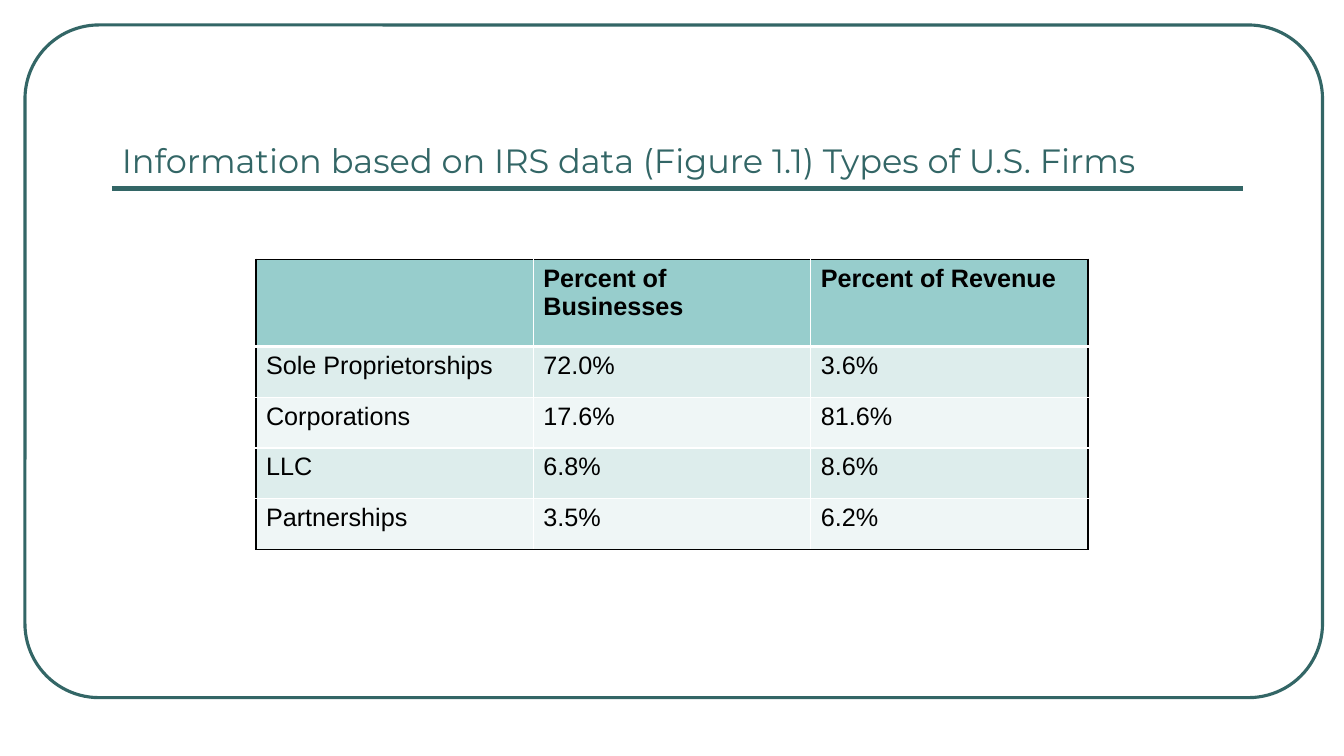
from lxml import etree
from pptx import Presentation
from pptx.dml.color import RGBColor
from pptx.enum.shapes import MSO_CONNECTOR, MSO_SHAPE
from pptx.enum.text import MSO_ANCHOR
from pptx.oxml.ns import qn
from pptx.util import Cm, Pt

ROUNDED = MSO_SHAPE.ROUNDED_RECTANGLE
STRAIGHT = MSO_CONNECTOR.STRAIGHT
BOTTOM = MSO_ANCHOR.BOTTOM
TEAL = RGBColor(0x33, 0x66, 0x66)
BLACK = RGBColor(0, 0, 0)
WHITE = RGBColor(0xFF, 0xFF, 0xFF)
HEADER_FILL = RGBColor(0x97, 0xCD, 0xCC)
BAND_FILLS = [RGBColor(0xEF, 0xF6, 0xF6), RGBColor(0xDD, 0xED, 0xEC)]

FIRMS = [
    ["", "Percent of Businesses", "Percent of Revenue"],
    ["Sole Proprietorships", "72.0%", "3.6%"],
    ["Corporations", "17.6%", "81.6%"],
    ["LLC", "6.8%", "8.6%"],
    ["Partnerships", "3.5%", "6.2%"],
]
LAST_ROW = len(FIRMS) - 1
LAST_COL = len(FIRMS[0]) - 1


def add_border(cell, side, color, width):
    ln = etree.SubElement(cell._tc.get_or_add_tcPr(), qn("a:ln" + side), w=str(Pt(width)))
    fill = etree.SubElement(ln, qn("a:solidFill"))
    etree.SubElement(fill, qn("a:srgbClr"), val=str(color))


prs = Presentation()
prs.slide_width = Cm(33.87)
prs.slide_height = Cm(19.05)
s = prs.slides.add_slide(prs.slide_layouts[6])

frame = s.shapes.add_shape(ROUNDED, Cm(0.63), Cm(0.63), Cm(32.7), Cm(16.95))
frame.adjustments[0] = 0.11
frame.shadow.inherit = False
frame.fill.background()
frame.line.color.rgb = TEAL
frame.line.width = Pt(2.25)

rule = s.shapes.add_connector(STRAIGHT, Cm(2.82), Cm(4.75), Cm(31.32), Cm(4.75))
rule.line.color.rgb = TEAL
rule.line.width = Pt(3)
etree.SubElement(rule._element.spPr, qn("a:effectLst"))

title = s.shapes.add_textbox(Cm(2.82), Cm(1.48), Cm(28.5), Cm(3.18))
tf = title.text_frame
tf.word_wrap = True
tf.vertical_anchor = BOTTOM
p = tf.paragraphs[0]
p.text = "Information based on IRS data (Figure 1.1) Types of U.S. Firms"
p.font.name = "Montserrat"
p.font.size = Pt(24)
p.font.color.rgb = TEAL

table = s.shapes.add_table(
    len(FIRMS), len(FIRMS[0]), Cm(6.45), Cm(6.53), Cm(20.97), Cm(7.32)).table
for column in table.columns:
    column.width = Cm(6.99)
for i, row in enumerate(table.rows):
    row.height = Cm(1.28) if i else Cm(2.2)

for i, values in enumerate(FIRMS):
    for j, value in enumerate(values):
        cell = table.cell(i, j)
        add_border(cell, "L", BLACK if j == 0 else WHITE, 1)
        add_border(cell, "R", BLACK if j == LAST_COL else WHITE, 1)
        add_border(cell, "T", BLACK if i == 0 else WHITE, 3 if i == 1 else 1)
        add_border(cell, "B", BLACK if i == LAST_ROW else WHITE, 3 if i == 0 else 1)
        cell.fill.solid()
        cell.fill.fore_color.rgb = BAND_FILLS[i % 2] if i else HEADER_FILL
        p = cell.text_frame.paragraphs[0]
        p.text = value
        p.font.name = "Arial"
        p.font.size = Pt(18)
        p.font.bold = i == 0
        p.font.color.rgb = BLACK

prs.save("out.pptx")
